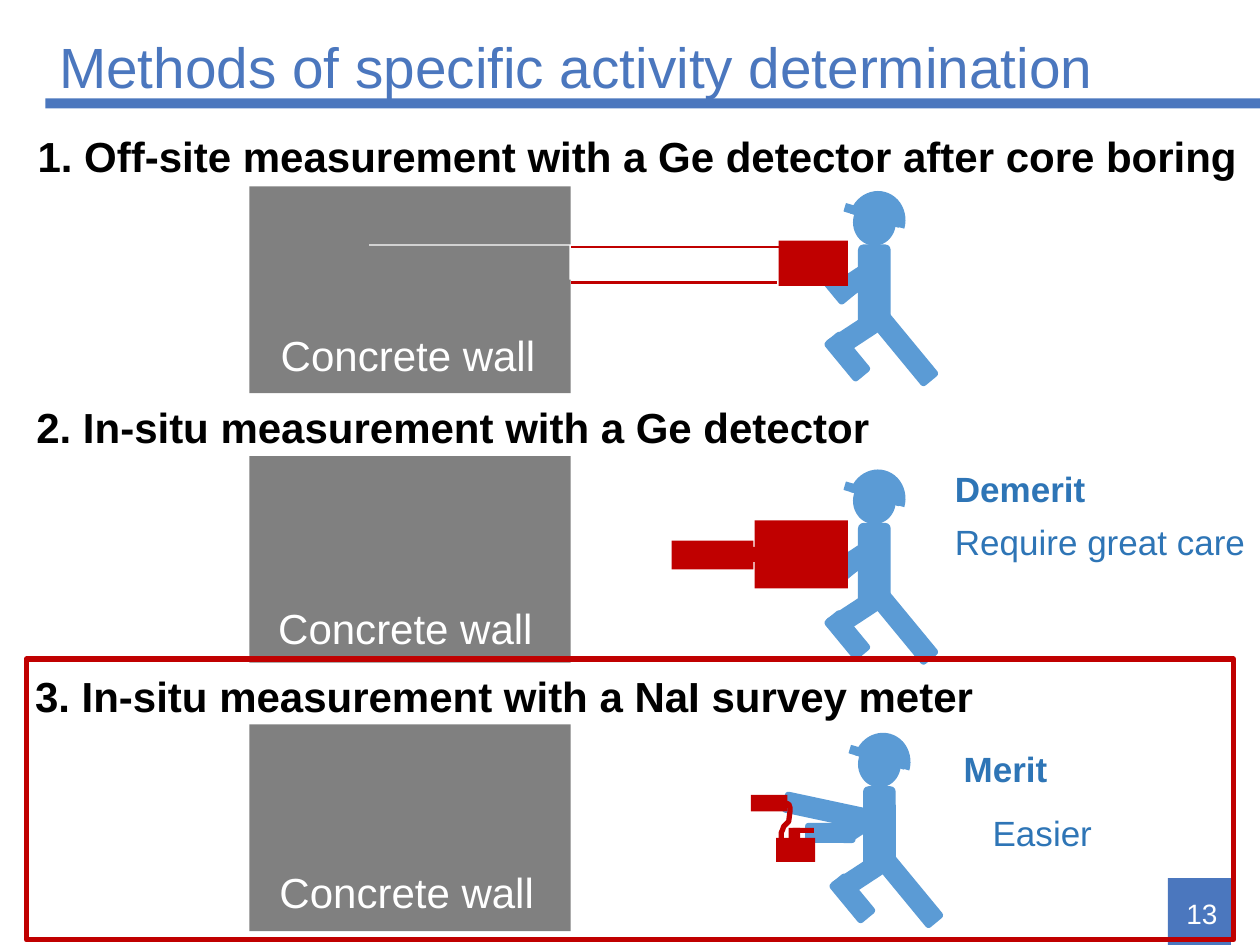
"""Builds a slide comparing three methods of specific activity determination."""
from lxml import etree
from pptx import Presentation
from pptx import util as u
from pptx.dml.color import RGBColor
from pptx.enum import shapes, text
from pptx.oxml.ns import qn

COLORS = {"title": "4B77BE", "wall": "808080", "worker": "5B9BD5", "device": "C00000",
          "note": "2E75B6", "black": "000000", "white": "FFFFFF"}
KIND = shapes.MSO_SHAPE

deck = Presentation()
deck.slide_width, deck.slide_height = u.Inches(10), u.Inches(7.5)
column, row = deck.slide_width / 100, deck.slide_height / 75
page = deck.slides.add_slide(deck.slide_layouts[5])


def draw(kind, left, top, width, height, color, angle=0, adjust=()):
    shape = page.shapes.add_shape(kind, int(left * column), int(top * row),
                                  int(width * column), int(height * row))
    shape.shadow.inherit = False
    shape.fill.solid()
    shape.fill.fore_color.rgb = RGBColor.from_string(COLORS[color])
    shape.line.fill.background()
    shape.rotation = angle
    for index, value in enumerate(adjust):
        shape.adjustments[index] = value
    return shape


def write(box, words, size, color, bold=False, align=text.PP_ALIGN.LEFT):
    box.text_frame.text = words
    para = box.text_frame.paragraphs[0]
    para.alignment = align
    font = para.runs[0].font
    font.name, font.size, font.bold = "Arial", u.Pt(size), bold
    font.color.rgb = RGBColor.from_string(COLORS[color])
    return para


draw(KIND.RECTANGLE, 92.7, 69.7, 5, 5.3, "title")
draw(KIND.RECTANGLE, 3.6, 7.8, 96.4, 0.8, "title")

title = page.shapes.title
title.left, title.top = int(3.7 * column), int(1.8 * row)
title.width, title.height = int(90 * column), int(7.5 * row)
title.text_frame.auto_size = text.MSO_AUTO_SIZE.NONE
title.text_frame.vertical_anchor = text.MSO_ANCHOR.MIDDLE
write(title, "Methods of specific activity determination", 32.4, "title").line_spacing = 0.9

number = page.shapes.add_textbox(int(92.8 * column), int(70.5 * row),
                                 int(4.8 * column), int(4 * row))
number.text_frame.word_wrap = True
number.text_frame.vertical_anchor = text.MSO_ANCHOR.MIDDLE
write(number, "13", 16, "white", align=text.PP_ALIGN.RIGHT)

for wall_top in (14.8, 36.2, 57.5):
    draw(KIND.RECTANGLE, 19.8, wall_top, 25.5, 16.4, "wall")
draw(KIND.RECTANGLE, 29.3, 19.4, 17, 2.8, "white")
draw(KIND.RECTANGLE, 29.3, 19.5, 15.9, 2.9, "wall")

body_parts = [
    (KIND.OVAL, 0, 0, 3.4, 3.7, 0, ()),
    (KIND.ROUNDED_RECTANGLE, 0.4, 3.6, 2.6, 6.6, 0, ()),
    (KIND.ROUNDED_RECTANGLE, -0.3, 4.6, 1.7, 3.4, 56.8, ()),
    (KIND.ROUNDED_RECTANGLE, -0.9, 8.8, 1.7, 4.2, 56.8, ()),
    (KIND.ROUNDED_RECTANGLE, 3.2, 8.4, 1.7, 6.8, 320.5, ()),
    (KIND.ROUNDED_RECTANGLE, -1.3, 10.5, 1.7, 4, 320.5, ()),
    (KIND.ROUNDED_RECTANGLE, 1.2, -1, 0.7, 4.6, 286.5, (0.07,)),
    (KIND.CHORD, -0.5, -0.5, 4.8, 4.5, 105.6, (54.1, 162)),
]
bent_arm = [(KIND.ROUNDED_RECTANGLE, -2.4, 4.4, 1.7, 4, 320.5, ())]
reaching_arms = [(KIND.ROUNDED_RECTANGLE, -3, 5.3, 1.6, 4, 270, ()),
                 (KIND.ROUNDED_RECTANGLE, -3.3, 2, 1.7, 7.1, 282.1, ())]
workers = [(67.7, 15.8, bent_arm), (67.7, 37.9, bent_arm), (68.1, 58.8, reaching_arms)]
for head_left, head_top, arms in workers:
    for kind, left, top, width, height, angle, adjust in body_parts + arms:
        draw(kind, head_left + left, head_top + top, width, height, "worker", angle, adjust)

devices = [
    (61.8, 19.1, 5.5, 3.6),
    (59.9, 41.3, 7.4, 5.4), (53.3, 42.9, 6.5, 2.3), (55.5, 43.4, 6.5, 1.2),
    (61.6, 66.5, 3.1, 1.9), (62.9, 65.7, 1.7, 0.4), (62.6, 65.7, 0.9, 1.4),
    (59.6, 63.1, 2.9, 1.3),
]
for device in devices:
    draw(KIND.RECTANGLE, *device, "device")

for start, end, level in ((45.3, 61.7, 22.4), (45.3, 62.1, 19.6)):
    edge = page.shapes.add_connector(shapes.MSO_CONNECTOR.STRAIGHT, int(start * column),
                                     int(level * row), int(end * column), int(level * row))
    edge.line.color.rgb = RGBColor.from_string(COLORS["device"])
    edge.line.width = u.Pt(1.5)
    etree.SubElement(edge.element.spPr, qn("a:effectLst"))

cable_points = [(62, 66.1), (62.1, 65.9), (62.2, 65.6), (62.3, 65.5), (62.6, 65.2),
                (62.7, 64.4), (62.7, 64.1), (62.6, 63.8), (62.5, 63.8), (62.3, 63.7)]
outline = page.shapes.build_freeform(int(62 * column), int(66.5 * row))
outline.add_line_segments([(int(x * column), int(y * row)) for x, y in cable_points], close=False)
cable = outline.convert_to_shape()
frame = draw(KIND.RECTANGLE, 2.1, 52.3, 95.8, 22.3, "white")
for outlined in (cable, frame):
    outlined.shadow.inherit = False
    outlined.fill.background()
    outlined.line.color.rgb = RGBColor.from_string(COLORS["device"])
    outlined.line.width = u.Pt(3)

labels = [
    ("1. Off-site measurement with a Ge detector after core boring",
     2, 9.9, 98.1, 5, 24, "black", True),
    ("2. In-situ measurement with a Ge detector", 1.9, 31.4, 68.8, 5, 24, "black", True),
    ("3. In-situ measurement with a NaI survey meter", 1.8, 52.7, 77.2, 5, 24, "black", True),
    ("Concrete wall", 21.3, 25.7, 22.4, 5, 24, "white", False),
    ("Concrete wall", 21.1, 47.3, 22.4, 5, 24, "white", False),
    ("Concrete wall", 21.2, 68.3, 22.4, 5, 24, "white", False),
    ("Demerit", 74.8, 36.6, 12.5, 4.4, 20, "note", True),
    ("Require great care", 74.8, 40.8, 25.2, 4.4, 20, "note", False),
    ("Merit", 75.5, 58.8, 8.7, 4.4, 20, "note", True),
    ("Easier", 77.8, 63.9, 10, 4.4, 20, "note", False),
]
for words, left, top, width, height, size, color, bold in labels:
    label = page.shapes.add_textbox(int(left * column), int(top * row),
                                    int(width * column), int(height * row))
    label.text_frame.word_wrap = False
    label.text_frame.auto_size = text.MSO_AUTO_SIZE.SHAPE_TO_FIT_TEXT
    write(label, words, size, color, bold)

deck.save("out.pptx")
